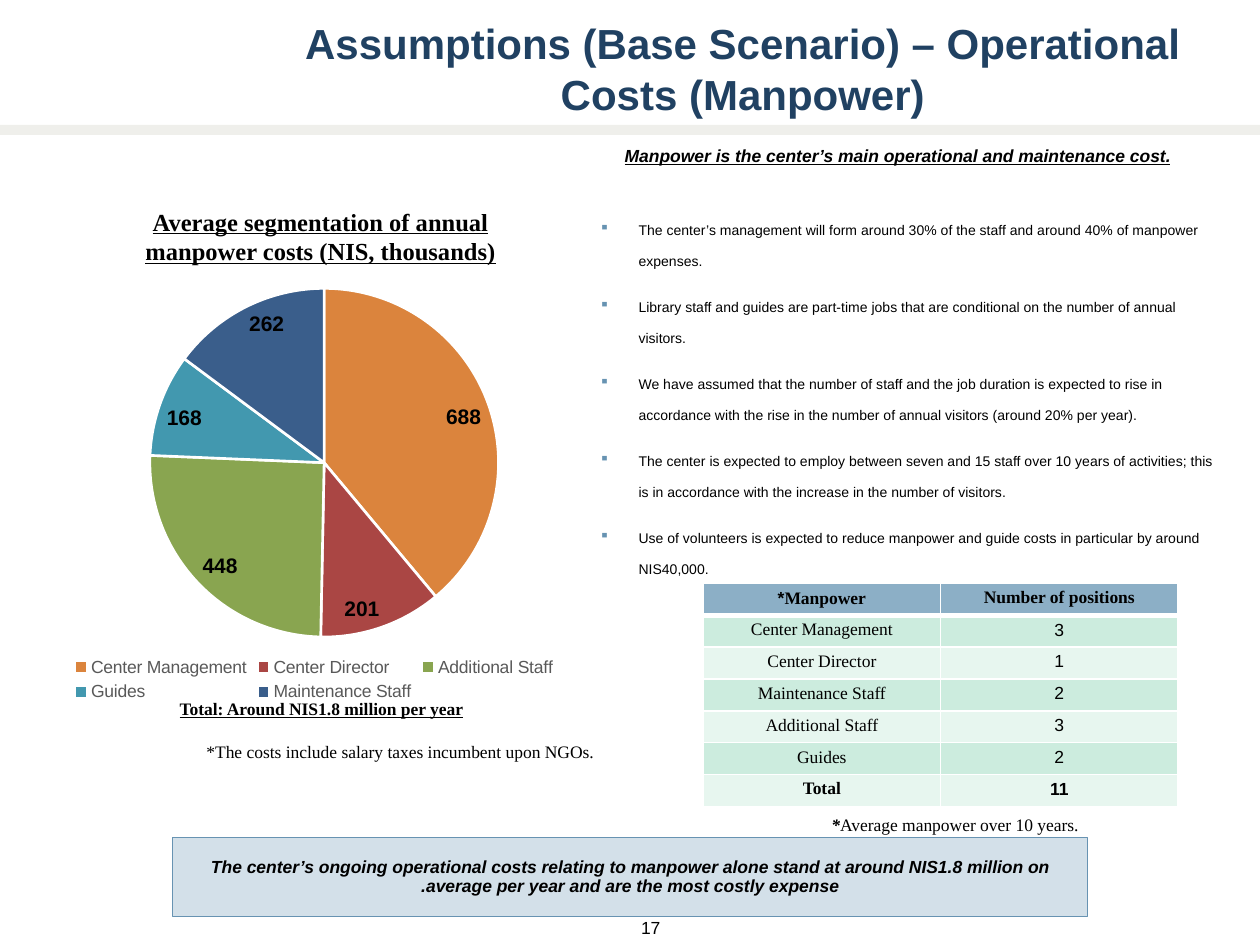
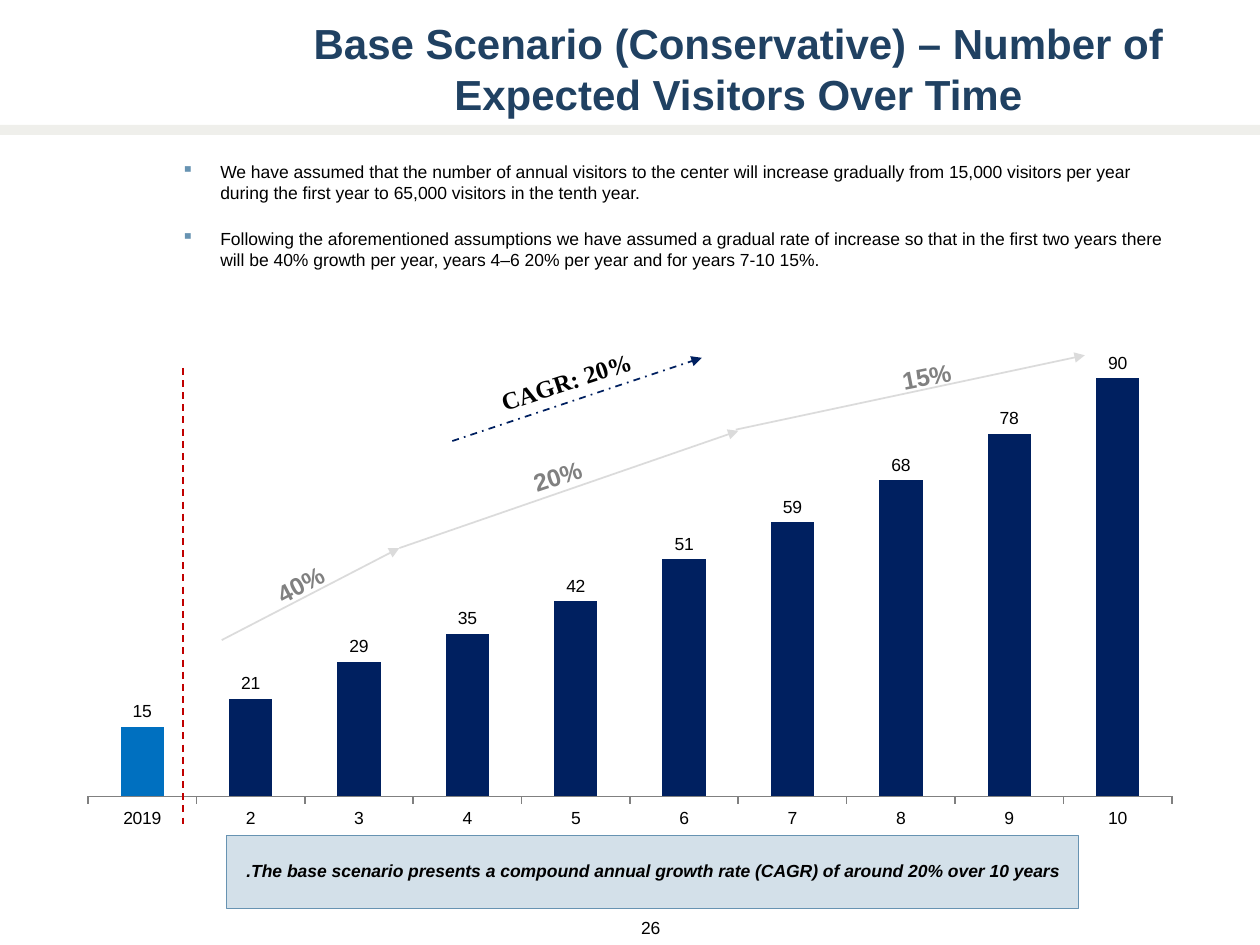
from lxml.etree import SubElement
from pptx import Presentation
from pptx.chart.data import CategoryChartData
from pptx.dml.color import RGBColor
from pptx.enum.chart import XL_CHART_TYPE, XL_LABEL_POSITION, XL_LEGEND_POSITION, XL_TICK_MARK
from pptx.enum.dml import MSO_LINE
from pptx.enum.shapes import MSO_CONNECTOR, MSO_SHAPE
from pptx.enum.text import MSO_ANCHOR, MSO_AUTO_SIZE, PP_ALIGN
from pptx.oxml import parse_xml
from pptx.oxml.ns import nsdecls, qn
from pptx.util import Inches, Pt

BLACK = RGBColor(0, 0, 0)
WHITE = RGBColor(0xFF, 0xFF, 0xFF)
TITLE_BLUE = RGBColor(0x20, 0x41, 0x62)
BAND_GREY = RGBColor(0xE1, 0xE1, 0xD9)
ACCENT = RGBColor(0x67, 0x93, 0xB2)
CALLOUT_FILL = RGBColor(0xD3, 0xE0, 0xE9)
GREY = RGBColor(0x80, 0x80, 0x80)
LEGEND_GREY = RGBColor(0x59, 0x59, 0x59)
NAVY = RGBColor(0x00, 0x20, 0x60)
FIRST_YEAR_BLUE = RGBColor(0x00, 0x70, 0xC0)
RED = RGBColor(0xC0, 0x00, 0x00)
HEADER_BLUE = RGBColor(0x8C, 0xAF, 0xC6)
ROW_FILLS = [RGBColor(0xCC, 0xEC, 0xDE), RGBColor(0xE7, 0xF6, 0xEF)]

SANS, SERIF = "Arial", "Times New Roman"
BODY = {"name": SANS, "size": Pt(10), "color": BLACK}
TITLE = {"name": SANS, "size": Pt(24), "bold": True, "color": TITLE_BLUE}
EMPHASIS = BODY | {"bold": True, "italic": True}
NOTE = BODY | {"name": SERIF}
SMALL = BODY | {"size": Pt(8)}
TOTAL = NOTE | {"bold": True, "underline": True}
CHART_TITLE = TOTAL | {"size": Pt(14)}
GROWTH = NOTE | {"size": Pt(14), "bold": True}

CENTER = {"alignment": PP_ALIGN.CENTER}
RIGHT = {"alignment": PP_ALIGN.RIGHT}
CALLOUT = CENTER | {"line_spacing": 0.9}
WIDE_LINES = {"line_spacing": Pt(18), "space_before": Pt(4), "space_after": Pt(4)}
LOOSE = {"space_before": Pt(7), "space_after": Pt(7)}

COST_TITLE = "Assumptions (Base Scenario) – Operational Costs (Manpower)"
COST_LEAD = "Manpower is the center’s main operational and maintenance cost."
COST_POINTS = [
    "The center’s management will form around 30% of the staff and around 40% of manpower expenses.",
    "Library staff and guides are part-time jobs that are conditional on the number of annual visitors.",
    "We have assumed that the number of staff and the job duration is expected to rise in accordance "
    "with the rise in the number of annual visitors (around 20% per year).",
    "The center is expected to employ between seven and 15 staff over 10 years of activities; this is "
    "in accordance with the increase in the number of visitors.",
    "Use of volunteers is expected to reduce manpower and guide costs in particular by around NIS40,000.",
]
COST_CALLOUT = ("The center’s ongoing operational costs relating to manpower alone stand at around "
                "NIS1.8 million on average per year and are the most costly expense.")
COSTS = [
    ("Center Management", 688, RGBColor(0xDB, 0x84, 0x3D)),
    ("Center Director", 201, RGBColor(0xAA, 0x46, 0x44)),
    ("Additional Staff", 448, RGBColor(0x89, 0xA5, 0x50)),
    ("Guides", 168, RGBColor(0x42, 0x98, 0xAF)),
    ("Maintenance Staff", 262, RGBColor(0x3A, 0x5E, 0x8B)),
]
POSITIONS = [
    ("Manpower*", "Number of positions"),
    ("Center Management", "3"),
    ("Center Director", "1"),
    ("Maintenance Staff", "2"),
    ("Additional Staff", "3"),
    ("Guides", "2"),
    ("Total", "11"),
]

VISITOR_TITLE = "Base Scenario (Conservative) – Number of Expected Visitors Over Time"
VISITOR_POINTS = [
    "We have assumed that the number of annual visitors to the center will increase gradually from "
    "15,000 visitors per year during the first year to 65,000 visitors in the tenth year.",
    "Following the aforementioned assumptions we have assumed a gradual rate of increase so that in the "
    "first two years there will be 40% growth per year, years 4–6 20% per year and for years 7-10 15%.",
]
VISITOR_CALLOUT = "The base scenario presents a compound annual growth rate (CAGR) of around 20% over 10 years."
YEARS = ["2019"] + [str(year) for year in range(2, 11)]
VISITORS = [15, 21, 29, 35, 42, 51, 59, 68, 78, 90]
GROWTH_ARROWS = [
    ((1.76, 5.08), (3.17, 4.35)),
    ((3.17, 4.35), (5.86, 3.42)),
    ((5.84, 3.41), (8.61, 2.82)),
]
GROWTH_LABELS = [
    ("CAGR: 20%", (3.85, 2.86, 1.29, 0.34), 341.7, BLACK),
    ("40%", (2.09, 4.47, 0.59, 0.34), 332.3, GREY),
    ("20%", (4.13, 3.61, 0.59, 0.34), 341.7, GREY),
    ("15%", (7.06, 2.82, 0.59, 0.34), 348.9, GREY),
]


def inches(values):
    return [Inches(value) for value in values]


def apply(target, values):
    for name, value in values.items():
        if name == "color":
            target.color.rgb = value
        else:
            setattr(target, name, value)


def set_alpha(color_format_element, percent):
    color = color_format_element.find(".//" + qn("a:srgbClr"))
    SubElement(color, qn("a:alpha"), val=str(percent * 1000))


def add_bullet(para):
    properties = para._p.get_or_add_pPr()
    properties.set("marL", str(Inches(0.31)))
    properties.set("indent", str(-Inches(0.31)))
    color = SubElement(SubElement(properties, qn("a:buClr")), qn("a:srgbClr"))
    color.set("val", str(ACCENT))
    SubElement(properties, qn("a:buChar"), char="▪")


def write(frame, paragraphs, font, layout=None, rtl=False, bullets=False):
    for index, content in enumerate(paragraphs):
        para = frame.paragraphs[0] if index == 0 else frame.add_paragraph()
        if bullets:
            add_bullet(para)
        apply(para, layout or {})
        if index == 0:
            para.space_before = Pt(0)
        if rtl:
            para._p.get_or_add_pPr().set("rtl", "1")
        spans = [(content, {})] if isinstance(content, str) else content
        for text, changes in spans:
            span = para.add_run()
            span.text = text
            apply(span.font, font | changes)
            if rtl:
                SubElement(span._r.get_or_add_rPr(), qn("a:cs"), typeface=SANS)


def add_text(page, place, paragraphs, font, layout=None, rtl=False, bullets=False, wrap=True):
    box = page.shapes.add_textbox(*inches(place))
    box.text_frame.word_wrap = wrap
    write(box.text_frame, paragraphs, font, layout, rtl, bullets)
    return box


def add_rectangle(page, place, color):
    box = page.shapes.add_shape(MSO_SHAPE.RECTANGLE, *inches(place))
    box.shadow.inherit = False
    box.fill.solid()
    box.fill.fore_color.rgb = color
    return box


def add_callout(page, place, text):
    box = add_rectangle(page, place, CALLOUT_FILL)
    apply(box.line, {"color": ACCENT, "width": Pt(0.5)})
    apply(box.text_frame, {"word_wrap": True, "vertical_anchor": MSO_ANCHOR.MIDDLE})
    write(box.text_frame, [text], EMPHASIS, CALLOUT, rtl=True)


def add_page(deck, title, place, number, rtl=False):
    page = deck.slides.add_slide(deck.slide_layouts[5])
    band = add_rectangle(page, (0, 0.99, 10, 0.08), BAND_GREY)
    band.line.fill.background()
    set_alpha(band._element.spPr.find(qn("a:solidFill")), 50)
    heading = page.shapes.title
    apply(heading, dict(zip(("left", "top", "width", "height"), inches(place))))
    frame = heading.text_frame
    apply(frame, {"word_wrap": True, "auto_size": MSO_AUTO_SIZE.NONE,
                  "vertical_anchor": MSO_ANCHOR.MIDDLE})
    apply(frame, dict.fromkeys(("margin_left", "margin_top", "margin_right", "margin_bottom"), 0))
    write(frame, [title], TITLE, CENTER, rtl)
    add_text(page, (4.67, 7.23, 0.67, 0.42), [number], BODY, RIGHT, rtl=True)
    return page


def add_chart(page, kind, place, categories, values, plot_area):
    data = CategoryChartData()
    data.categories = categories
    data.add_series("Series 1", values)
    chart = page.shapes.add_chart(kind, *inches(place), data).chart
    chart.has_title = False
    chart.has_legend = False
    apply(chart.font, BODY)
    area = chart._chartSpace.chart.plotArea
    for old in area.findall(qn("c:layout")):
        area.remove(old)
    sizes = "".join(f'<c:{name} val="{value}"/>' for name, value in zip("xywh", plot_area))
    area.insert(0, parse_xml(
        f'<c:layout {nsdecls("c")}><c:manualLayout><c:layoutTarget val="inner"/>'
        f'<c:xMode val="edge"/><c:yMode val="edge"/>{sizes}</c:manualLayout></c:layout>'))
    return chart


def add_labels(plot, position, font):
    plot.has_data_labels = True
    apply(plot.data_labels, {"show_value": True, "position": position,
                             "number_format": "#,##0", "number_format_is_linked": False})
    apply(plot.data_labels.font, font)


def add_line(page, start, end, color, dash=None, alpha=None, arrow=True):
    line = page.shapes.add_connector(MSO_CONNECTOR.STRAIGHT, *inches(start + end))
    apply(line.line, {"color": color, "width": Pt(1)})
    if dash:
        line.line.dash_style = dash
    properties = line._element.spPr
    outline = properties.find(qn("a:ln"))
    if alpha:
        set_alpha(outline, alpha)
    if arrow:
        SubElement(outline, qn("a:tailEnd"), type="triangle")
    SubElement(properties, qn("a:effectLst"))


def add_borders(cell, bottom):
    properties = cell._tc.get_or_add_tcPr()
    for side, width in (("L", 1), ("R", 1), ("T", 1), ("B", bottom)):
        edge = SubElement(properties, qn(f"a:ln{side}"), w=str(Pt(width)))
        color = SubElement(SubElement(edge, qn("a:solidFill")), qn("a:srgbClr"))
        color.set("val", str(WHITE))


def add_positions(page):
    shape = page.shapes.add_table(len(POSITIONS), 2, *inches((5.58, 4.63, 3.77, 1.77)))
    for row_index, row in enumerate(POSITIONS):
        header = row_index == 0
        bold = header or row[0] == "Total"
        for column, text in enumerate(row):
            cell = shape.table.cell(row_index, column)
            apply(cell, {"margin_left": Inches(0.09), "margin_right": Inches(0.09),
                         "margin_top": Inches(0.04), "margin_bottom": Inches(0.04)})
            add_borders(cell, 3 if header else 1)
            cell.fill.solid()
            cell.fill.fore_color.rgb = HEADER_BLUE if header else ROW_FILLS[(row_index - 1) % 2]
            write(cell.text_frame, [text], NOTE | {"bold": bold}, CENTER, rtl=True)


def add_cost_pie(page):
    names, values, colors = zip(*COSTS)
    chart = add_chart(page, XL_CHART_TYPE.PIE, (-0.12, 1.92, 5.23, 3.69), names, values,
                      (0.25, 0.1, 0.53, 0.75))
    chart.has_legend = True
    apply(chart.legend, {"position": XL_LEGEND_POSITION.BOTTOM, "include_in_layout": False})
    apply(chart.legend.font, BODY | {"color": LEGEND_GREY})
    plot = chart.plots[0]
    add_labels(plot, XL_LABEL_POSITION.INSIDE_END, BODY | {"size": Pt(12), "bold": True})
    for index, color in enumerate(colors):
        slice_format = plot.series[0].points[index].format
        slice_format.fill.solid()
        slice_format.fill.fore_color.rgb = color
        apply(slice_format.line, {"color": WHITE, "width": Pt(1.5)})


def add_visitor_columns(page):
    chart = add_chart(page, XL_CHART_TYPE.COLUMN_CLUSTERED, (0.52, 2.55, 8.96, 4.1), YEARS, VISITORS,
                      (0.02, 0.02, 0.96, 0.9))
    apply(chart.value_axis, {"visible": False, "has_major_gridlines": False,
                             "minimum_scale": 0, "maximum_scale": 100})
    apply(chart.category_axis, {"major_tick_mark": XL_TICK_MARK.OUTSIDE})
    apply(chart.category_axis.format.line, {"color": GREY, "width": Pt(1)})
    plot = chart.plots[0]
    apply(plot, {"gap_width": 150, "vary_by_categories": False})
    add_labels(plot, XL_LABEL_POSITION.OUTSIDE_END, BODY)
    series = plot.series[0]
    for part, color in ((series, NAVY), (series.points[0], FIRST_YEAR_BLUE)):
        part.format.fill.solid()
        part.format.fill.fore_color.rgb = color


def build_costs(deck):
    page = add_page(deck, COST_TITLE, (1.96, 0.14, 7.87, 0.8), "17")
    add_text(page, (0.68, 1.59, 3.73, 0.57),
             ["Average segmentation of annual manpower costs (NIS, thousands)"], CHART_TITLE, CENTER, rtl=True)
    add_text(page, (1.1, 5.49, 2.9, 0.27), ["Total: Around NIS1.8 million per year"], TOTAL, CENTER, rtl=True)
    add_text(page, (4.66, 1.59, 5.16, 2.93), COST_POINTS, SMALL, WIDE_LINES, bullets=True)
    add_callout(page, (1.37, 6.65, 7.26, 0.62), COST_CALLOUT)
    add_cost_pie(page)
    add_positions(page)
    add_text(page, (1.54, 5.83, 3.32, 0.27), ["*The costs include salary taxes incumbent upon NGOs."], NOTE)
    add_text(page, (4.86, 1.02, 4.87, 0.32), [COST_LEAD], EMPHASIS | {"underline": True},
             LOOSE | {"line_spacing": Pt(18)})
    add_text(page, (6.5, 6.41, 3.32, 0.27),
             [[("*", {"bold": True, "italic": True}), ("Average manpower over 10 years.", {})]], NOTE)


def build_visitors(deck):
    page = add_page(deck, VISITOR_TITLE, (1.8, 0.14, 8.12, 0.8), "26", rtl=True)
    add_visitor_columns(page)
    add_text(page, (1.34, 1.23, 7.98, 1.34), VISITOR_POINTS, BODY, LOOSE, bullets=True)
    add_callout(page, (1.8, 6.63, 6.76, 0.58), VISITOR_CALLOUT)
    add_line(page, (3.59, 3.5), (5.57, 2.84), NAVY, MSO_LINE.DASH_DOT)
    add_line(page, (1.45, 2.92), (1.45, 6.57), RED, MSO_LINE.DASH, arrow=False)
    for start, end in GROWTH_ARROWS:
        add_line(page, start, end, GREY, alpha=27)
    for text, place, angle, color in GROWTH_LABELS:
        box = add_text(page, place, [text], GROWTH | {"color": color}, CENTER, rtl=True, wrap=False)
        box.rotation = angle


def main():
    deck = Presentation()
    apply(deck, {"slide_width": Inches(10), "slide_height": Inches(7.5)})
    build_costs(deck)
    build_visitors(deck)
    deck.save("out.pptx")


if __name__ == "__main__":
    main()
